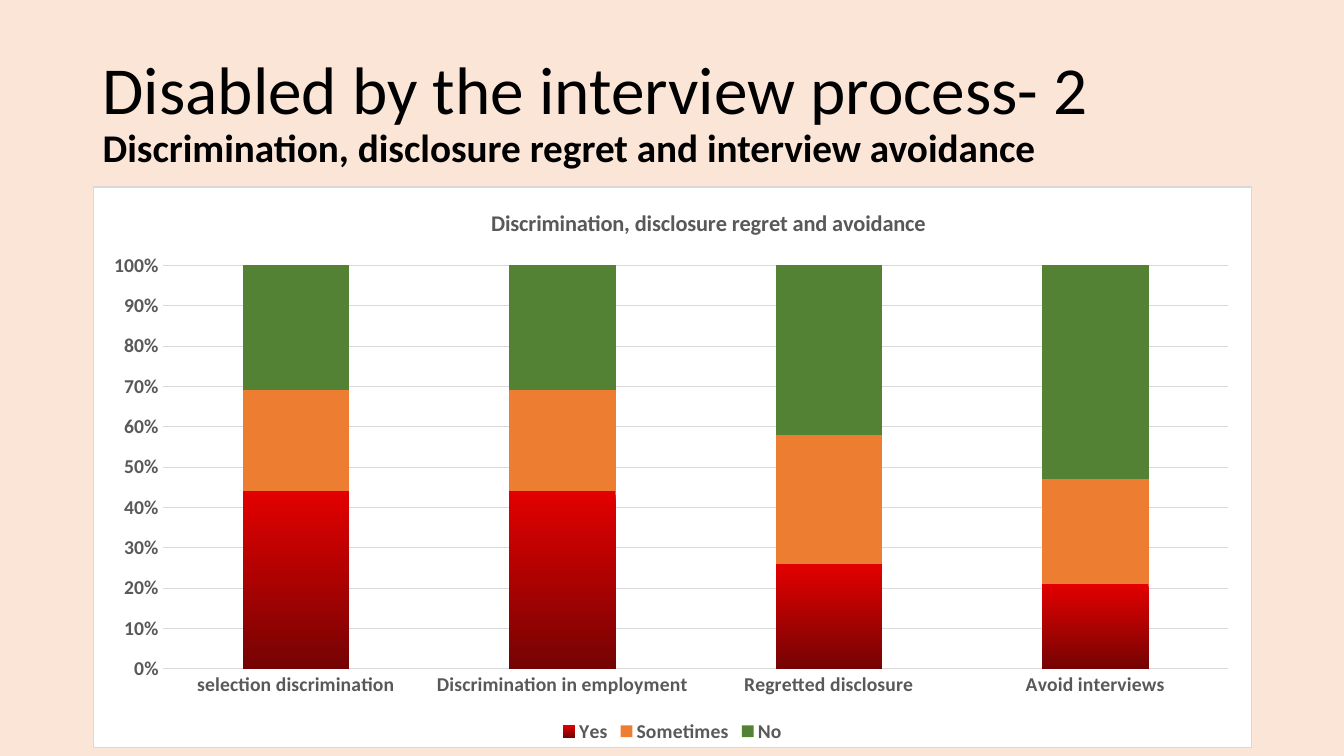
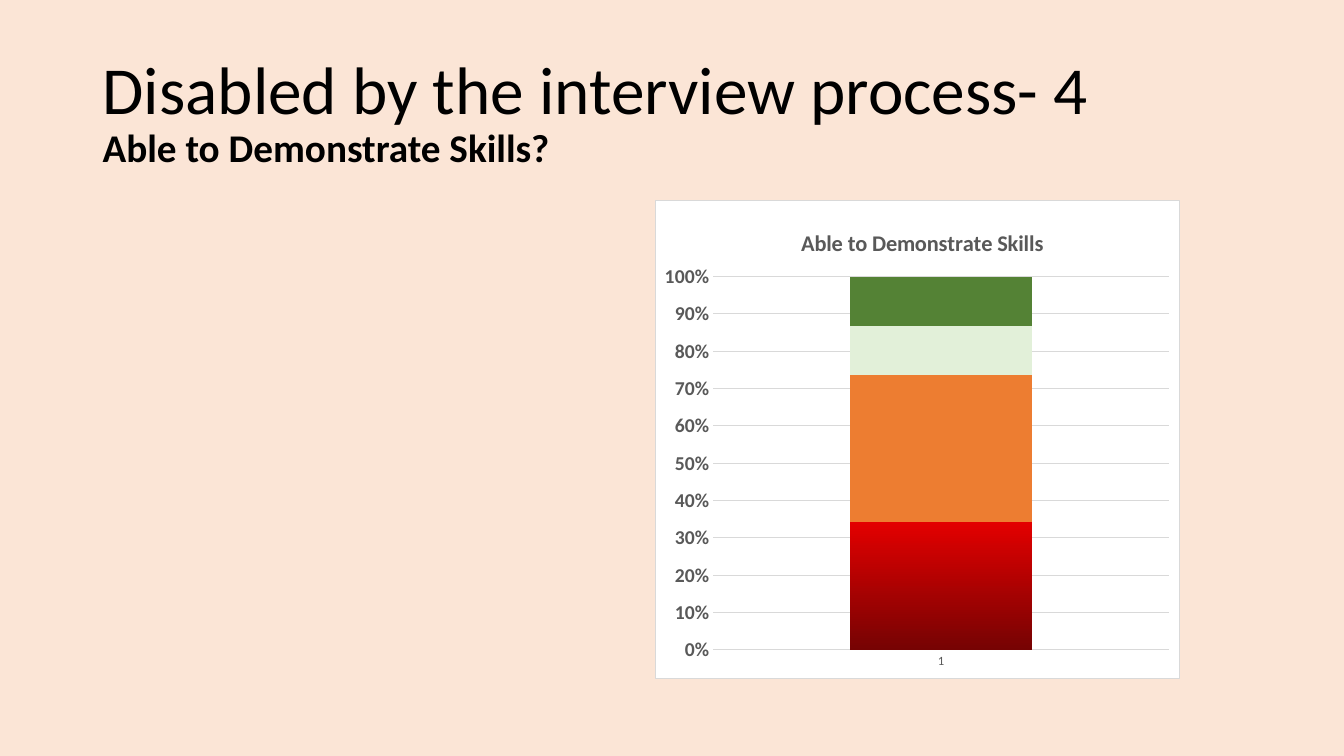
from dataclasses import dataclass

from lxml.etree import SubElement, fromstring
from pptx import Presentation
from pptx.chart.data import CategoryChartData
from pptx.dml.color import RGBColor
from pptx.enum.chart import XL_CHART_TYPE, XL_LEGEND_POSITION, XL_TICK_MARK
from pptx.enum.text import MSO_ANCHOR
from pptx.oxml import parse_xml
from pptx.oxml.ns import nsdecls, qn
from pptx.util import Inches, Pt


@dataclass(frozen=True)
class Theme:
    font: str = "Calibri"
    back: str = "FBE5D6"
    ink: str = "000000"
    label: str = "595959"
    grid: str = "D9D9D9"
    panel: str = "FFFFFF"
    red: tuple = ("E30000", "760303")
    orange: str = "ED7D31"
    pale: str = "E2F0D9"
    green: str = "548235"
    head: int = 48
    sub: int = 28
    title: int = 16
    axis: int = 14
    small: int = 9
    line: float = 0.75


T = Theme()


def style(font, size, color=T.label, bold=True):
    font.name, font.size, font.bold = T.font, Pt(size), bold
    font.color.rgb = RGBColor.from_string(color)


def place(node, **spots):
    """Pin a chart part at fractions of the chart area."""
    layout = node.find(qn("c:layout"))
    if layout is None:
        layout = SubElement(node, qn("c:layout"))
        node.insert(0, layout)
    manual = SubElement(layout, qn("c:manualLayout"))
    if "w" in spots:
        SubElement(manual, qn("c:layoutTarget")).set("val", "inner")
    for mode in ("xMode", "yMode"):
        SubElement(manual, qn("c:" + mode)).set("val", "edge")
    for key, value in spots.items():
        SubElement(manual, qn("c:" + key)).set("val", str(value))


PANEL = (
    f'<c:spPr {nsdecls("c", "a")}>'
    f'<a:solidFill><a:srgbClr val="{T.panel}"/></a:solidFill>'
    f'<a:ln w="{int(Pt(T.line))}"><a:solidFill><a:srgbClr val="{T.grid}"/>'
    "</a:solidFill></a:ln></c:spPr>"
)

SLIDES = [
    dict(
        head="Disabled by the interview process- 2",
        sub="Discrimination, disclosure regret and interview avoidance",
        title="Discrimination, disclosure regret and avoidance",
        box=(0.92, 1.85, 11.5, 5.57),
        spot=dict(x=0.34, y=0.03),
        plot=dict(x=0.06, y=0.14, w=0.92, h=0.72),
        cats=["selection discrimination", "Discrimination in employment",
              "Regretted disclosure", "Avoid interviews"],
        series=[("Yes", [44, 44, 26, 21], T.red),
                ("Sometimes", [25, 25, 32, 26], T.orange),
                ("No", [31, 31, 42, 53], T.green)],
        legend=True,
        cat_font=(T.axis, T.label, True),
    ),
    dict(
        head="Disabled by the interview process- 4",
        sub="Able to Demonstrate Skills?",
        title="Able to Demonstrate Skills",
        box=(6.5, 1.98, 5.2, 4.76),
        spot=dict(x=0.27, y=0.05),
        plot=dict(x=0.11, y=0.16, w=0.87, h=0.78),
        cats=["1"],
        series=[("Series 1", [34], T.red),
                ("Series 2", [39], T.orange),
                ("Series 3", [13], T.pale),
                ("Series 4", [13], T.green)],
        legend=False,
        cat_font=(T.small, T.label, False),
    ),
]

prs = Presentation()
prs.slide_width, prs.slide_height = Inches(13.33), Inches(7.5)
back = prs.slide_master.background.fill
back.solid()
back.fore_color.rgb = RGBColor.from_string(T.back)

for item in SLIDES:
    slide = prs.slides.add_slide(prs.slide_layouts[6])

    # Heading and subheading
    box = slide.shapes.add_textbox(
        Inches(0.92), Inches(0.4), Inches(11.5), Inches(1.45))
    frame = box.text_frame
    frame.word_wrap = True
    frame.vertical_anchor = MSO_ANCHOR.MIDDLE
    para = frame.paragraphs[0]
    para.text = item["head"] + "\v" + item["sub"]
    para.line_spacing = 0.9
    head, sub = para.runs
    style(head.font, T.head, T.ink, False)
    style(sub.font, T.sub, T.ink)

    # Stacked chart
    data = CategoryChartData()
    data.categories = item["cats"]
    for name, values, _ in item["series"]:
        data.add_series(name, values)
    chart = slide.shapes.add_chart(
        XL_CHART_TYPE.COLUMN_STACKED_100, *map(Inches, item["box"]), data).chart
    style(chart.font, T.axis)
    chart.element.find(qn("c:chart")).addnext(parse_xml(PANEL))

    chart.has_title = True
    title = chart.chart_title
    title.text_frame.text = item["title"]
    style(title.text_frame.paragraphs[0].runs[0].font, T.title)
    title.include_in_layout = False
    place(title.format.fill and chart.element.find(".//" + qn("c:title")),
          **item["spot"])
    place(chart.element.find(".//" + qn("c:plotArea")), **item["plot"])

    chart.has_legend = item["legend"]
    if item["legend"]:
        chart.legend.position = XL_LEGEND_POSITION.BOTTOM
        chart.legend.include_in_layout = False
        style(chart.legend.font, T.axis)

    # Axes and grid
    cat, val = chart.category_axis, chart.value_axis
    for axis in (cat, val):
        axis.major_tick_mark = axis.minor_tick_mark = XL_TICK_MARK.NONE
    style(cat.tick_labels.font, *item["cat_font"])
    style(val.tick_labels.font, T.axis)
    val.tick_labels.number_format = "0%"
    val.tick_labels.number_format_is_linked = False
    val.format.line.fill.background()
    val.has_major_gridlines = True
    for line in (cat.format.line, val.major_gridlines.format.line):
        line.color.rgb = RGBColor.from_string(T.grid)
        line.width = Pt(T.line)

    # Columns
    plot = chart.plots[0]
    plot.gap_width, plot.overlap = 150, 100
    plot.vary_by_categories = False
    for series, (_, _, color) in zip(plot.series, item["series"]):
        fill = series.format.fill
        if isinstance(color, tuple):
            fill.gradient()
            fill.gradient_angle = 270
            for stop, shade in zip(fill.gradient_stops, color):
                stop.color.rgb = RGBColor.from_string(shade)
        else:
            fill.solid()
            fill.fore_color.rgb = RGBColor.from_string(color)

prs.save("out.pptx")
